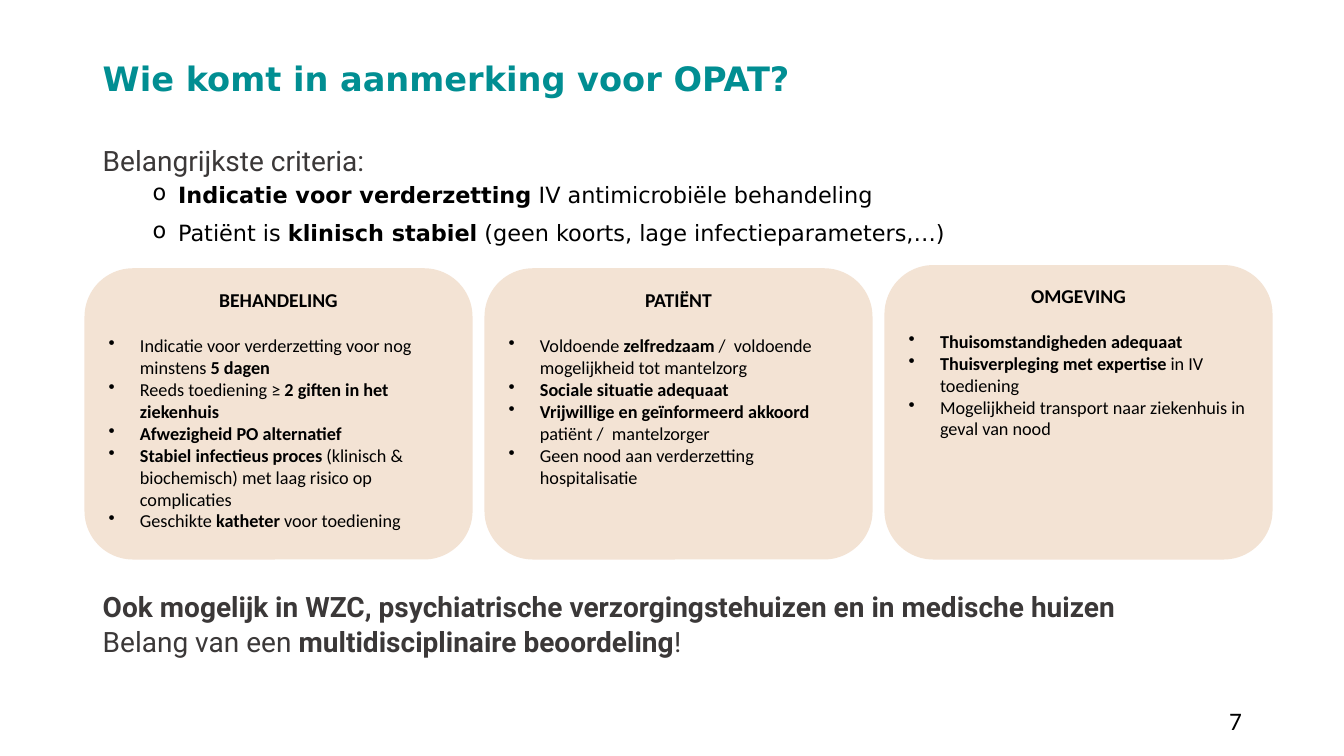
from pptx import Presentation
from pptx.dml.color import RGBColor
from pptx.enum.shapes import MSO_SHAPE
from pptx.enum.text import MSO_ANCHOR, PP_ALIGN
from pptx.oxml.ns import qn
from pptx.util import Cm, Pt
from lxml import etree

TEAL = RGBColor(0x01, 0x8E, 0x92)
GREY = RGBColor(0x3B, 0x38, 0x38)
BLACK = RGBColor(0, 0, 0)
SAND = RGBColor(0xF3, 0xE3, 0xD4)
ROUND = MSO_SHAPE.ROUNDED_RECTANGLE
TOP, MIDDLE = MSO_ANCHOR.TOP, MSO_ANCHOR.MIDDLE
LEFT, CENTER, RIGHT = PP_ALIGN.LEFT, PP_ALIGN.CENTER, PP_ALIGN.RIGHT

MARGIN, WIDE = 2.34, 30.48
CARD_LEFT, CARD_WIDTH, CARD_GAP, CARD_END = 2.13, 9.78, 0.3, 14.1

CARDS = [
    ("BEHANDELING", 6.76, 17, [
        "Indicatie voor verderzetting voor nog minstens *5 dagen*",
        "Reeds toediening ≥ *2 giften in het ziekenhuis*",
        "*Afwezigheid PO alternatief*",
        "*Stabiel infectieus proces* (klinisch & biochemisch) met laag risico op complicaties",
        "Geschikte *katheter* voor toediening",
    ]),
    ("PATIËNT", 6.76, 17, [
        "Voldoende *zelfredzaam* /  voldoende mogelijkheid tot mantelzorg",
        "*Sociale situatie adequaat*",
        "*Vrijwillige en geïnformeerd akkoord* patiënt /  mantelzorger",
        "Geen nood aan verderzetting hospitalisatie",
    ]),
    ("OMGEVING", 6.68, 16, [
        "*Thuisomstandigheden adequaat*",
        "*Thuisverpleging met expertise* in IV toediening",
        "Mogelijkheid transport naar ziekenhuis in geval van nood",
    ]),
]


def set_bullet(para, mark, margin, hang):
    props = para._p.get_or_add_pPr()
    props.set("marL", str(Cm(margin)))
    props.set("indent", str(-Cm(hang)))
    etree.SubElement(props, qn("a:buChar")).set("char", mark)


def add_text(frame, text, size=13, font="Calibri", color=BLACK, align=LEFT,
             line=1.0, before=0, after=0, mark=None, margin=0.79, hang=0.79):
    para = frame.paragraphs[0]
    if para.runs:
        para = frame.add_paragraph()
    para.alignment = align
    para.line_spacing = line
    para.space_before, para.space_after = Pt(before), Pt(after)
    if mark:
        set_bullet(para, mark, margin, hang)
    for index, part in enumerate(text.split("*")):
        if part:
            run = para.add_run()
            run.text = part
            run.font.size, run.font.name = Pt(size), font
            run.font.bold = index % 2 == 1
            run.font.color.rgb = color


def add_box(slide, left, top, width, height, anchor=TOP):
    box = slide.shapes.add_textbox(Cm(left), Cm(top), Cm(width), Cm(height))
    frame = box.text_frame
    frame.word_wrap = True
    frame.vertical_anchor = anchor
    return frame


def add_card(slide, left, top, title, gap, items):
    card = slide.shapes.add_shape(ROUND, Cm(left), Cm(top), Cm(CARD_WIDTH), Cm(CARD_END - top))
    card.shadow.inherit = False
    card.fill.solid()
    card.fill.fore_color.rgb = SAND
    card.line.fill.background()
    frame = card.text_frame
    frame.word_wrap = True
    frame.vertical_anchor = TOP
    add_text(frame, f"*{title}*", size=14, align=CENTER, after=gap)
    for item in items:
        add_text(frame, item, mark="•")


def main():
    deck = Presentation()
    deck.slide_width, deck.slide_height = Cm(33.87), Cm(19.05)
    slide = deck.slides.add_slide(deck.slide_layouts[6])

    title = add_box(slide, MARGIN, 1.22, 25.04, 1.6, MIDDLE)
    add_text(title, "*Wie komt in aanmerking voor OPAT?*", size=24,
             font="DejaVu Sans", color=TEAL, line=0.9)

    intro = add_box(slide, MARGIN, 3.58, WIDE, 2.9)
    add_text(intro, "Belangrijkste criteria:", size=20, font="Roboto", color=GREY, line=0.9)
    for item in ("*Indicatie voor verderzetting* IV antimicrobiële behandeling",
                 "Patiënt is *klinisch stabiel* (geen koorts, lage infectieparameters,…)"):
        add_text(intro, item, size=16, font="DejaVu Sans", line=0.9, before=5, after=5,
                 mark="o", margin=1.9, hang=0.64)

    for index, (name, top, gap, items) in enumerate(CARDS):
        left = CARD_LEFT + index * (CARD_WIDTH + CARD_GAP)
        add_card(slide, left, top, name, gap, items)

    closing = add_box(slide, MARGIN, 14.73, WIDE, 2)
    for item in ("*Ook mogelijk in WZC, psychiatrische verzorgingstehuizen en in medische huizen*",
                 "Belang van een *multidisciplinaire beoordeling*!"):
        add_text(closing, item, size=20, font="Roboto", color=GREY, after=1)

    number = add_box(slide, 23.93, 17.65, 7.62, 1.02, MIDDLE)
    add_text(number, "7", size=18, align=RIGHT)

    deck.save("out.pptx")


if __name__ == "__main__":
    main()
